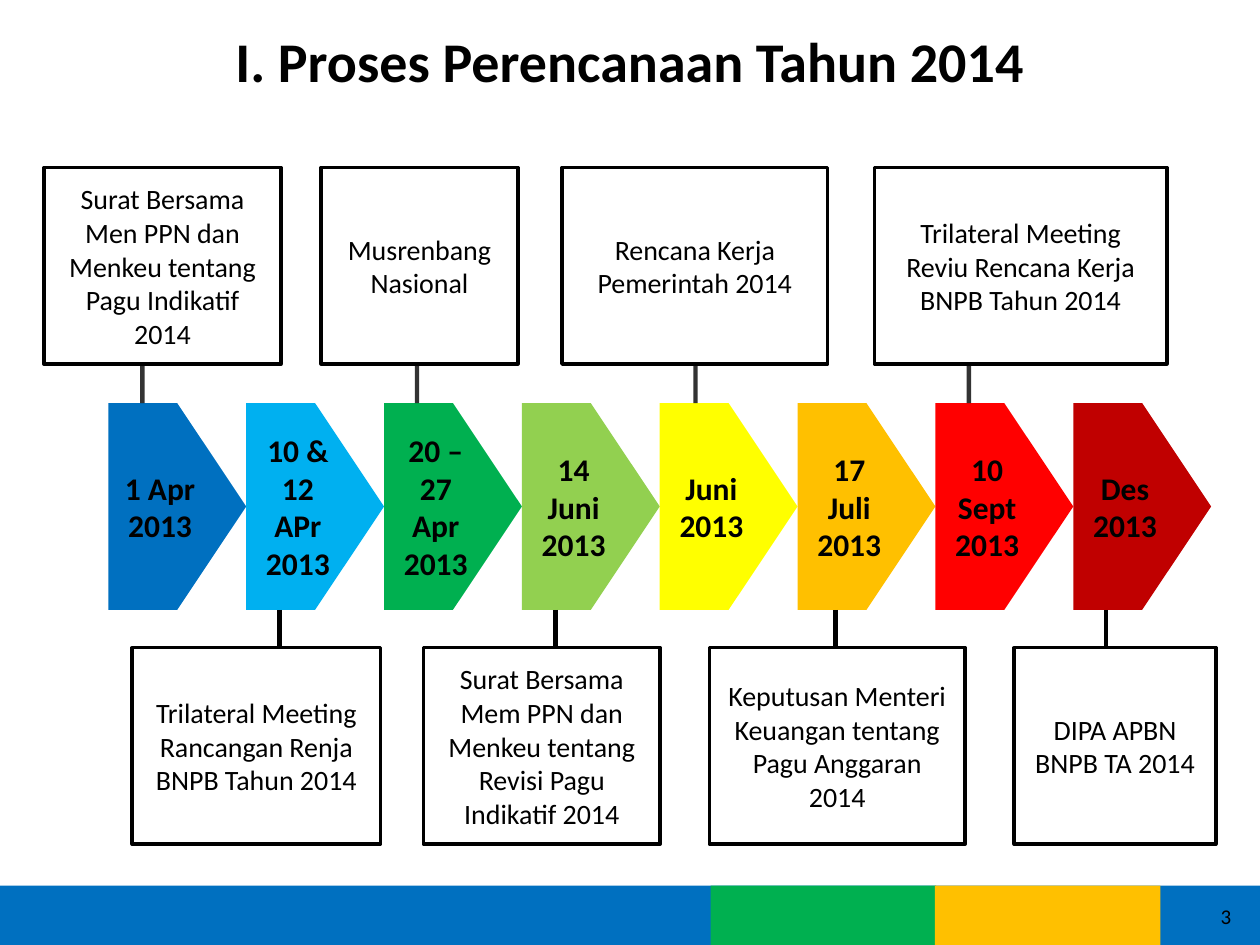
from lxml import etree
from pptx import Presentation
from pptx.dml.color import RGBColor
from pptx.enum.shapes import MSO_CONNECTOR, MSO_SHAPE
from pptx.enum.text import MSO_ANCHOR, PP_ALIGN
from pptx.oxml.ns import qn
from pptx.util import Inches, Pt

RECT, ARROW = MSO_SHAPE.RECTANGLE, MSO_SHAPE.PENTAGON
LINE = MSO_CONNECTOR.STRAIGHT
MIDDLE = MSO_ANCHOR.MIDDLE
CENTER, RIGHT = PP_ALIGN.CENTER, PP_ALIGN.RIGHT

# Content
TITLE = "I. Proses Perencanaan Tahun 2014"
PAGE = "3"
STEPS = [  # date, arrow colour
    ("1 Apr 2013", "0070C0"),
    ("10 & 12 APr 2013", "00B0F0"),
    ("20 – 27 Apr 2013", "00B050"),
    ("14 Juni 2013", "92D050"),
    ("Juni 2013", "FFFF00"),
    ("17 Juli 2013", "FFC000"),
    ("10 Sept 2013", "FF0000"),
    ("Des 2013", "C00000"),
]
NOTES = [  # text, left, width, link x; even above the arrows, odd below
    ("Surat Bersama Men PPN dan Menkeu tentang Pagu Indikatif 2014",
     0.35, 1.88, 1.13),
    ("Trilateral Meeting Rancangan Renja BNPB Tahun 2014", 1.05, 1.97, 2.22),
    ("Musrenbang Nasional", 2.55, 1.56, 3.31),
    ("Surat Bersama Mem PPN dan Menkeu tentang Revisi Pagu Indikatif 2014",
     3.36, 1.88, 4.41),
    ("Rencana Kerja Pemerintah 2014", 4.46, 2.11, 5.52),
    ("Keputusan Menteri Keuangan tentang Pagu Anggaran 2014",
     5.63, 2.03, 6.63),
    ("Trilateral Meeting Reviu Rencana Kerja BNPB Tahun 2014",
     6.94, 2.32, 7.69),
    ("DIPA APBN BNPB TA 2014", 8.05, 1.6, 8.78),
]
BANDS = [  # left, width, colour
    (0, 10, "0070C0"),
    (5.64, 1.79, "00B050"),
    (7.42, 1.79, "FFC000"),
]

THEME = {
    "font": "Calibri", "ink": "000000",
    "title": 32, "date": 18, "note": 16, "page": 12,
    "edge": 2, "link": 2.5, "fade": 80,
}

# Layout
ARROW_X, ARROW_Y, ARROW_H = 0.86, 3.2, 1.64
PITCH = 1.094
NOTE_H, ABOVE_Y, BELOW_Y = 1.56, 1.33, 5.14
BAND_Y, BAND_H = 7.03, 0.47


def color(code):
    return RGBColor.from_string(code)


def write(shape, text, size, bold=False, align=CENTER):
    frame = shape.text_frame
    frame.word_wrap = True
    frame.vertical_anchor = MIDDLE
    para = frame.paragraphs[0]
    para.alignment = align
    run = para.add_run()
    run.text = text
    run.font.name = THEME["font"]
    run.font.size = Pt(THEME[size])
    run.font.bold = bold
    run.font.color.rgb = color(THEME["ink"])


def draw(slide, kind, box, fill=None, edge=None):
    shape = slide.shapes.add_shape(kind, *map(Inches, box))
    shape.shadow.inherit = False
    if fill:
        shape.fill.solid()
        shape.fill.fore_color.rgb = color(fill)
    else:
        shape.fill.background()
    if edge:
        shape.line.color.rgb = color(edge)
        shape.line.width = Pt(THEME["edge"])
    else:
        shape.line.fill.background()
    return shape


def link(slide, x, top, end, fade=None):
    line = slide.shapes.add_connector(LINE, *map(Inches, (x, top, x, end)))
    line.line.color.rgb = color(THEME["ink"])
    line.line.width = Pt(THEME["link"])
    props = line._element.spPr
    if fade:
        tint = props.find(".//" + qn("a:srgbClr"))
        etree.SubElement(tint, qn("a:alpha")).set("val", str(fade * 1000))
    etree.SubElement(props, qn("a:effectLst"))


def main():
    deck = Presentation()
    deck.slide_width, deck.slide_height = Inches(10), Inches(7.5)
    slide = deck.slides.add_slide(deck.slide_layouts[5])

    # Title
    title = slide.shapes.title
    title.left, title.top = Inches(0.5), Inches(0.16)
    title.width, title.height = Inches(9), Inches(0.64)
    write(title, TITLE, "title", bold=True)

    # Footer bands and page number
    for left, width, fill in BANDS:
        draw(slide, RECT, (left, BAND_Y, width, BAND_H), fill)
    page = slide.shapes.add_textbox(*map(Inches, (7.54, 7.07, 2.33, 0.4)))
    write(page, PAGE, "page", align=RIGHT)

    # Row of dated arrows
    for i, (date, fill) in enumerate(STEPS):
        box = (ARROW_X + i * PITCH, ARROW_Y, PITCH, ARROW_H)
        write(draw(slide, ARROW, box, fill), date, "date", bold=True)

    # Notes, alternately above and below, each linked to its arrow
    for i, (text, left, width, x) in enumerate(NOTES):
        above = i % 2 == 0
        top = ABOVE_Y if above else BELOW_Y
        note = draw(slide, RECT, (left, top, width, NOTE_H),
                    edge=THEME["ink"])
        write(note, text, "note")
        if above:
            link(slide, x, ABOVE_Y + NOTE_H, ARROW_Y, THEME["fade"])
        else:
            link(slide, x, ARROW_Y + ARROW_H, BELOW_Y)

    deck.save("out.pptx")


if __name__ == "__main__":
    main()
